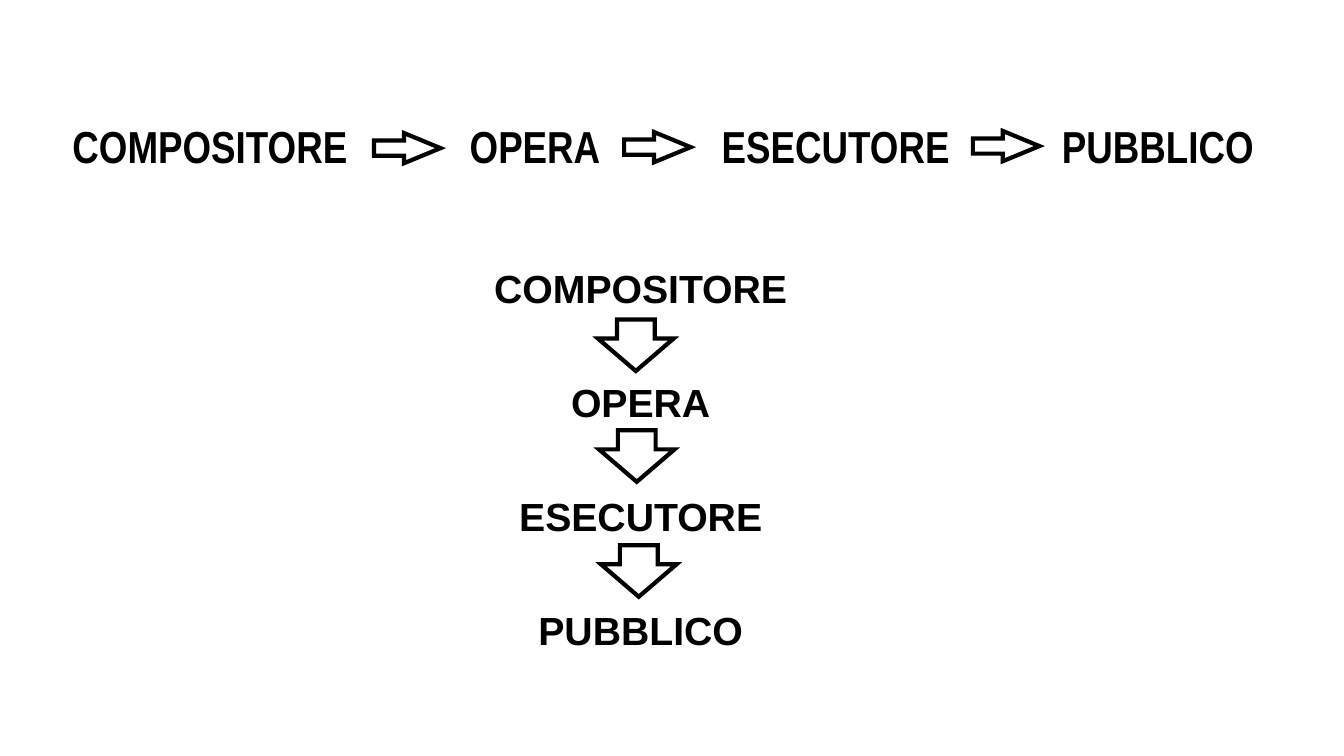
import pptx
import pptx.util
import pptx.dml.color
import pptx.enum.shapes
import pptx.enum.text
import lxml.etree

THEME = {
    "ink": pptx.dml.color.RGBColor(0, 0, 0),
    "row_font": "Arial Narrow",
    "row_size": pptx.util.Pt(32),
    "column_font": "Arial",
    "column_size": pptx.util.Pt(28),
    "outline": pptx.util.Pt(3),
}
STAGES = ["COMPOSITORE", "OPERA", "ESECUTORE", "PUBBLICO"]

deck = pptx.Presentation()
deck.slide_width = pptx.util.Inches(13.33)
deck.slide_height = pptx.util.Inches(7.5)
COL = deck.slide_width / 100
ROW = deck.slide_height / 100
slide = deck.slides.add_slide(deck.slide_layouts[6])


def add_text(lines, left, top, width, height, *, font, size, align,
             gap=0, tabs=()):
    box = slide.shapes.add_textbox(
        int(left * COL), int(top * ROW), int(width * COL), int(height * ROW))
    frame = box.text_frame
    frame.word_wrap = True
    frame.auto_size = pptx.enum.text.MSO_AUTO_SIZE.SHAPE_TO_FIT_TEXT
    for index, line in enumerate(lines):
        paragraph = frame.add_paragraph() if index else frame.paragraphs[0]
        paragraph.alignment = align
        if index:
            paragraph.space_before = pptx.util.Pt(gap)
        if tabs:
            properties = paragraph._p.get_or_add_pPr()
            namespace = "{" + properties.nsmap["a"] + "}"
            stops = lxml.etree.SubElement(properties, namespace + "tabLst")
            for stop in tabs:
                lxml.etree.SubElement(
                    stops, namespace + "tab", pos=str(int(stop * COL)), algn="l")
        run = paragraph.add_run()
        run.text = line
        run.font.name = font
        run.font.size = size
        run.font.bold = True
        run.font.color.rgb = THEME["ink"]


def add_arrow(left, top, width, height, head, rotation=0):
    arrow = slide.shapes.add_shape(
        pptx.enum.shapes.MSO_SHAPE.RIGHT_ARROW,
        int(left * COL), int(top * ROW), int(width * COL), int(height * ROW))
    arrow.adjustments[0] = 0.5
    arrow.adjustments[1] = head
    arrow.rotation = rotation
    arrow.shadow.inherit = False
    arrow.fill.background()
    arrow.line.color.rgb = THEME["ink"]
    arrow.line.width = THEME["outline"]
    outline = arrow.line._get_or_add_ln()
    lxml.etree.SubElement(
        outline, "{" + outline.nsmap["a"] + "}miter", lim="800000")


add_text(STAGES, 33.9, 34.27, 27.53, 53.47,
         font=THEME["column_font"], size=THEME["column_size"],
         align=pptx.enum.text.PP_ALIGN.CENTER, gap=48)
add_text(["\t".join(STAGES)], 4.65, 15.05, 90.7, 8.53,
         font=THEME["row_font"], size=THEME["row_size"],
         align=pptx.enum.text.PP_ALIGN.LEFT, tabs=(29.56, 48.31, 73.62))

for left, top in [(27.83, 17.6), (46.44, 17.47), (72.39, 17.33)]:
    add_arrow(left, top, 4.95, 4, 1.21)
for left, top in [(45.39, 40.67), (45.46, 55.33), (45.61, 70.53)]:
    add_arrow(left, top, 3.83, 10, 0.63, rotation=90)

deck.save("out.pptx")
